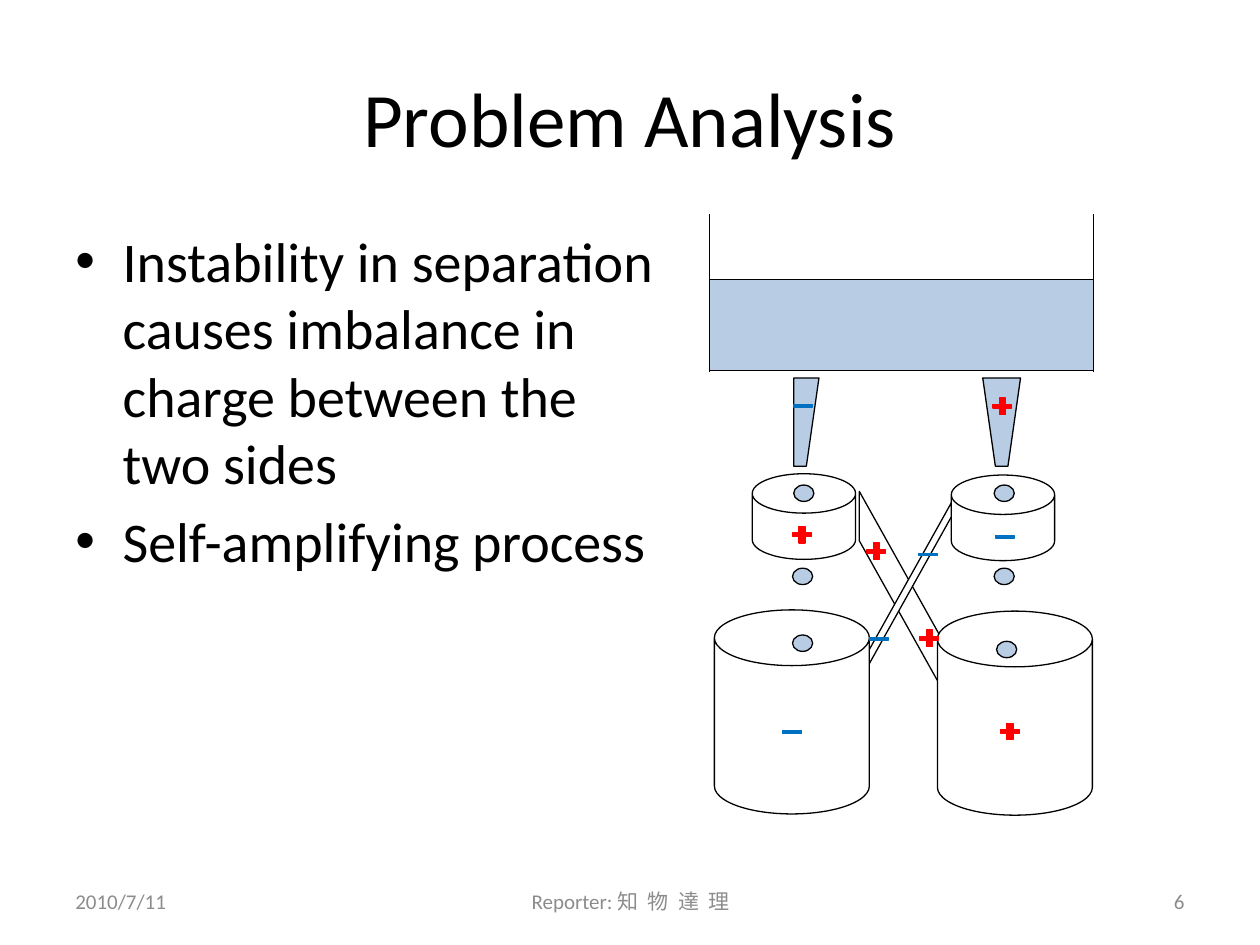
import pptx
import pptx.util
import pptx.dml.color
import pptx.enum.shapes
import pptx.enum.text
import pptx.oxml.ns
import lxml.etree

RGBColor = pptx.dml.color.RGBColor
SHAPE = pptx.enum.shapes.MSO_SHAPE
ALIGN = pptx.enum.text.PP_ALIGN
ANCHOR = pptx.enum.text.MSO_ANCHOR
Pt = pptx.util.Pt
qn = pptx.oxml.ns.qn

BLACK = RGBColor(0x00, 0x00, 0x00)
WHITE = RGBColor(0xFF, 0xFF, 0xFF)
GRAY = RGBColor(0x8C, 0x8C, 0x8C)
WATER = RGBColor(0xB8, 0xCC, 0xE4)
RED = RGBColor(0xFF, 0x00, 0x00)
BLUE = RGBColor(0x00, 0x70, 0xC0)

deck = pptx.Presentation()
deck.slide_width = pptx.util.Inches(10)
deck.slide_height = pptx.util.Inches(7.5)
COL = deck.slide_width / 100
ROW = deck.slide_height / 75
slide = deck.slides.add_slide(deck.slide_layouts[5])


def grid(left, top, width, height):
    return [round(n * unit) for n, unit in zip((left, top, width, height), (COL, ROW, COL, ROW))]


def paint(part, fill, line=BLACK):
    part.shadow.inherit = False
    part.fill.solid()
    part.fill.fore_color.rgb = fill
    part.line.color.rgb = line
    part.line.width = Pt(0.75)


title = slide.shapes.title
title.left, title.top, title.width, title.height = grid(5, 3, 90, 12.5)
title.text_frame.text = "Problem Analysis"
title.text_frame.vertical_anchor = ANCHOR.MIDDLE
heading = title.text_frame.paragraphs[0]
heading.alignment = ALIGN.CENTER
heading.font.size = Pt(44)
heading.font.name = "Calibri"
heading.font.color.rgb = BLACK

findings = slide.shapes.add_textbox(*grid(5, 17.5, 49.7, 49.5)).text_frame
findings.word_wrap = True
findings.text = ("Instability in separation causes imbalance in charge between the two sides\n"
                 "Self-amplifying process")
for finding in findings.paragraphs:
    finding.font.size = Pt(32)
    finding.font.name = "Calibri"
    finding.font.color.rgb = BLACK
    finding.space_before = Pt(6.4)
    props = finding._p.get_or_add_pPr()
    props.set("marL", "342900")
    props.set("indent", "-342900")
    bullet_font = lxml.etree.Element(qn("a:buFont"), typeface="Arial")
    bullet = lxml.etree.Element(qn("a:buChar"), char="•")
    props.find(qn("a:spcBef")).addnext(bullet_font)
    bullet_font.addnext(bullet)

for left, width, wording, alignment in (
    (5, 23.3, "2010/7/11", ALIGN.LEFT),
    (34.2, 31.7, "Reporter: 知  物  達  理", ALIGN.CENTER),
    (71.7, 23.3, "6", ALIGN.RIGHT),
):
    footer = slide.shapes.add_textbox(*grid(left, 69.5, width, 4)).text_frame
    footer.word_wrap = True
    footer.vertical_anchor = ANCHOR.MIDDLE
    footer.text = wording
    note = footer.paragraphs[0]
    note.alignment = alignment
    note.font.size = Pt(12)
    note.font.name = "Calibri"
    note.font.color.rgb = GRAY

water = slide.shapes.add_shape(SHAPE.RECTANGLE, *grid(56.3, 22.2, 30.5, 7.2))
paint(water, WATER)

for wall_x in (56.3, 86.8):
    x, top, _, depth = grid(wall_x, 17, 0, 12.5)
    wall = slide.shapes.add_connector(
        pptx.enum.shapes.MSO_CONNECTOR.STRAIGHT, x, top, x, top + depth)
    wall.line.color.rgb = BLACK
    wall.line.width = Pt(0.75)
    lxml.etree.SubElement(wall._element.spPr, qn("a:effectLst"))

for nozzle_x in (62.7, 78.5):
    outline = slide.shapes.build_freeform(nozzle_x, 29.5, scale=(COL, ROW))
    outline.add_line_segments(
        [(nozzle_x + 0.5, 36.9), (nozzle_x + 1.6, 36.9), (nozzle_x + 2.2, 29.5)], close=True)
    paint(outline.convert_to_shape(), WATER)

for left, top in ((59.7, 37.6), (75.5, 37.7)):
    ring = slide.shapes.add_shape(SHAPE.CAN, *grid(left, top, 8.2, 6.8))
    ring.adjustments[0] = 0.46
    paint(ring, WHITE)

for left, top, width, slant, turn in (
    (63, 44.2, 18.6, 1.79, 270),
    (63.5, 43.7, 15.8, 1.79, 90),
):
    wire = slide.shapes.add_shape(SHAPE.PARALLELOGRAM, *grid(left, top, width, 8.2))
    wire.adjustments[0] = slant
    wire.rotation = turn
    paint(wire, WHITE)
wire._element.spPr.find(qn("a:xfrm")).set("flipV", "1")

for left, top in ((74.4, 48.5), (56.7, 48.4)):
    bucket = slide.shapes.add_shape(SHAPE.CAN, *grid(left, top, 12.3, 16.2))
    bucket.adjustments[0] = 0.36
    paint(bucket, WHITE)

for left, top in ((63, 38.5), (62.9, 45.1), (62.9, 50.4),
                  (78.9, 38.5), (78.9, 45.1), (79.1, 50.9)):
    drop = slide.shapes.add_shape(SHAPE.OVAL, *grid(left, top, 1.6, 1.3))
    paint(drop, WATER)

for left, top in ((78.8, 31.6), (62.9, 41.8), (79.4, 57.4), (73, 50), (68.8, 43.1)):
    positive = slide.shapes.add_shape(SHAPE.CROSS, *grid(left, top, 1.5, 1.3))
    positive.adjustments[0] = 0.39
    paint(positive, RED, RED)

for left, top in ((63, 32.1), (79, 42.5), (72.9, 43.9), (69, 50.6), (62.1, 58)):
    negative = slide.shapes.add_shape(SHAPE.RECTANGLE, *grid(left, top, 1.5, 0.2))
    paint(negative, BLUE, BLUE)

deck.save("out.pptx")
